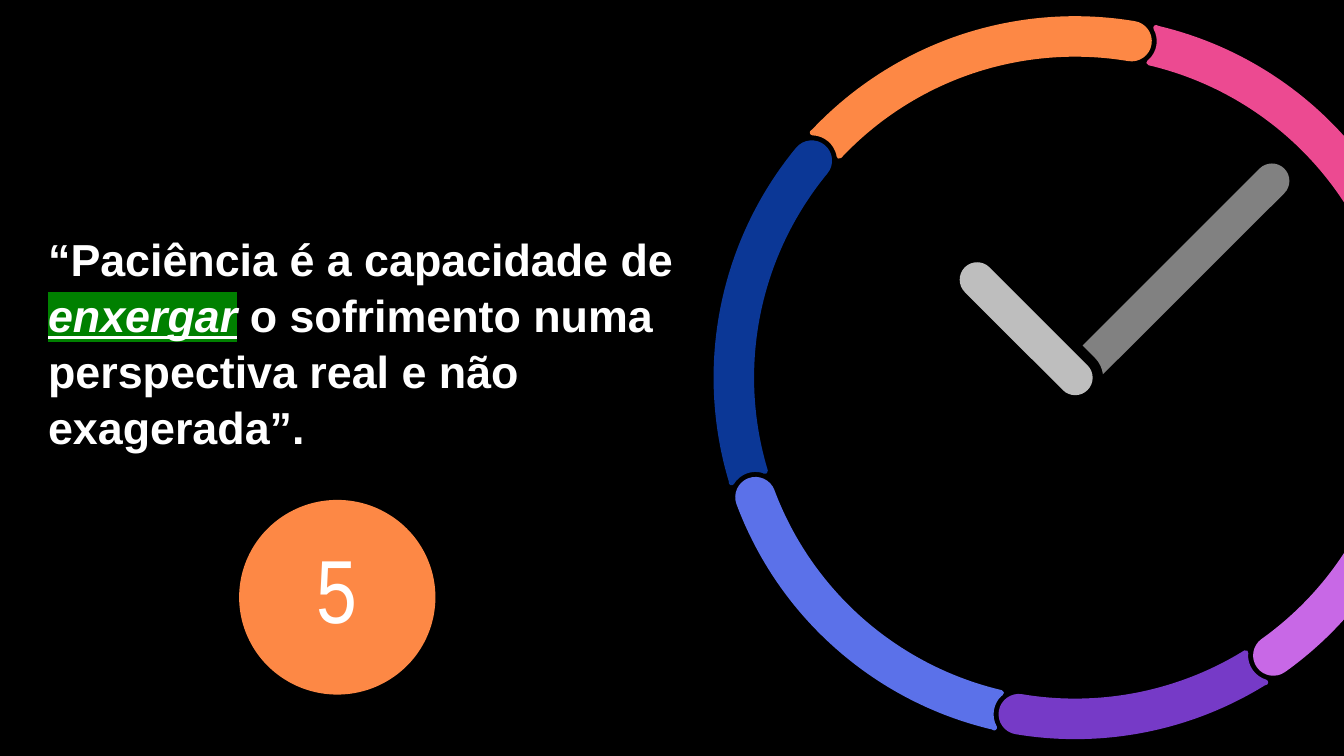
from math import cos, radians, sin, tan

from lxml.etree import SubElement
from pptx import Presentation
from pptx.dml.color import RGBColor as Rgb
from pptx.enum.shapes import MSO_SHAPE as Preset
from pptx.enum.text import MSO_ANCHOR as Anchor, PP_ALIGN as Align
from pptx.oxml.ns import qn
from pptx.util import Cm, Pt

COLORS = {
    "black": "000000", "white": "FFFFFF", "green": "008000",
    "navy": "0B3796", "blue": "5B71E9", "purple": "763AC7",
    "violet": "C868E6", "pink": "EC4A91", "orange": "FD8845",
    "gray": "818181", "silver": "BEBEBE",
}
PIVOT = (20.32, 7.14)
RING_RADIUS = 6.45
CAP_RADIUS = 0.33
NOTCH_RADIUS = 0.53
NOTCH_ANGLE = 38
NOTCH_STEP = 3.7
TILT = 9.5


def polar(center, radius, angle):
    turn = radians(angle)
    return center[0] + radius * sin(turn), center[1] - radius * cos(turn)


def arc(center, radius, start, end):
    middle = (start + end) / 2
    handle = 4 / 3 * tan(radians(end - start) / 8) * radius
    curves = [[polar(center, radius, start)]]
    for a, b in ((start, middle), (middle, end)):
        first, last = polar(center, radius, a), polar(center, radius, b)
        curves.append([polar(first, handle, a + 90),
                       polar(last, handle, b - 90), last])
    return curves


def ring_segment(start, end):
    tail = polar(PIVOT, RING_RADIUS, start)
    head = polar(PIVOT, RING_RADIUS, end)
    return (arc(PIVOT, RING_RADIUS + CAP_RADIUS, start + NOTCH_STEP, end)
            + arc(head, CAP_RADIUS, end, end + 180)
            + arc(PIVOT, RING_RADIUS - CAP_RADIUS, end, start + NOTCH_STEP)
            + arc(tail, NOTCH_RADIUS, start + 90 + NOTCH_ANGLE,
                  start + 90 - NOTCH_ANGLE))


def hand_tip(length, heading):
    return arc(polar(PIVOT, length, heading), CAP_RADIUS,
               heading - 90, heading + 90)


def minute_hand(length, heading):
    base = polar(PIVOT, NOTCH_RADIUS, heading)
    return (hand_tip(length, heading)
            + arc(PIVOT, NOTCH_RADIUS, heading + NOTCH_ANGLE, heading)
            + [[polar(base, CAP_RADIUS, heading - 90)]])


def hour_hand(length, heading):
    return (hand_tip(length, heading)
            + arc(PIVOT, CAP_RADIUS, heading + 90, heading + 270))


def write(paragraph, text, size, font="Arial", color="white", bold=False,
          italic=False, underline=False, highlight=None):
    run = paragraph.add_run()
    run.text = text
    style = run.font
    style.size, style.name = Pt(size), font
    style.bold, style.italic, style.underline = bold, italic, underline
    style.color.rgb = Rgb.from_string(COLORS[color])
    if highlight:
        marker = run._r.rPr.makeelement(qn("a:highlight"), {})
        SubElement(marker, qn("a:srgbClr"), val=COLORS[highlight])
        run._r.rPr.find(qn("a:solidFill")).addnext(marker)


class ClockSlide:
    def __init__(self, slide, background):
        self.slide = slide
        self.shapes = slide.shapes
        self.paint(slide.background.fill, background)

    def paint(self, fill, color):
        fill.solid()
        fill.fore_color.rgb = Rgb.from_string(COLORS[color])

    def finish(self, shape, color):
        shape.shadow.inherit = False
        self.paint(shape.fill, color)
        shape.line.fill.background()

    def outline(self, pieces, color):
        (x, y), *rest = [(Cm(x), Cm(y)) for piece in pieces for x, y in piece]
        builder = self.shapes.build_freeform(x, y)
        builder.add_line_segments(rest, close=True)
        shape = builder.convert_to_shape()
        lines = iter(list(shape._element.iter(qn("a:lnTo"))))
        for piece in pieces[1:]:
            steps = [next(lines) for _ in piece]
            if len(steps) == 3:
                curve = steps[0].makeelement(qn("a:cubicBezTo"), {})
                steps[0].addprevious(curve)
                for step in steps:
                    curve.append(step[0])
                    step.getparent().remove(step)
        self.finish(shape, color)
        return shape

    def segment(self, start, end, color):
        shape = self.outline(ring_segment(start, end), color)
        self.paint(shape.line.fill, color)
        shape.line.width = Pt(3)
        SubElement(shape._element.spPr.find(qn("a:ln")), qn("a:round"))
        dx = shape.left + shape.width / 2 - Cm(PIVOT[0])
        dy = shape.top + shape.height / 2 - Cm(PIVOT[1])
        c, s = cos(radians(TILT)), sin(radians(TILT))
        shape.left += round(dx * c - dy * s - dx)
        shape.top += round(dx * s + dy * c - dy)
        shape.rotation = TILT

    def quote(self, left, top, width, height, parts):
        frame = self.shapes.add_textbox(
            Cm(left), Cm(top), Cm(width), Cm(height)).text_frame
        frame.word_wrap = True
        frame.vertical_anchor = Anchor.MIDDLE
        frame.margin_left = frame.margin_right = Cm(0.25)
        frame.margin_top = frame.margin_bottom = Cm(0.25)
        sentence = frame.paragraphs[0]
        sentence.line_spacing = 1.04
        for text, style in parts:
            write(sentence, text, 24, bold=True, **style)

    def badge(self, left, top, width, height, text, color):
        circle = self.shapes.add_shape(
            Preset.OVAL, Cm(left), Cm(top), Cm(width), Cm(height))
        self.finish(circle, color)
        frame = circle.text_frame
        frame.margin_left = frame.margin_right = 0
        frame.margin_top = frame.margin_bottom = 0
        frame.vertical_anchor = Anchor.MIDDLE
        number = frame.paragraphs[0]
        number.alignment = Align.CENTER
        number.line_spacing = 0.8
        write(number, text, 48, font="Arial Narrow")


def main():
    deck = Presentation()
    deck.slide_width, deck.slide_height = Cm(25.4), Cm(14.29)
    clock = ClockSlide(deck.slides.add_slide(deck.slide_layouts[6]), "black")
    clock.quote(0.66, 3.1, 12.62, 6.71, [
        ("“Paciência é a capacidade de ", {}),
        ("enxergar", {"italic": True, "underline": True,
                      "highlight": "green"}),
        (" o sofrimento numa perspectiva real e não exagerada”.", {}),
    ])
    ring = [(240, 300, "navy"), (180, 240, "blue"), (135, 180, "purple"),
            (90, 135, "violet"), (0, 90, "pink"), (300, 360, "orange")]
    for start, end, color in ring:
        clock.segment(start, end, color)
    clock.outline(minute_hand(5.26, 45), "gray")
    clock.outline(hour_hand(2.62, 315), "silver")
    clock.badge(4.52, 9.45, 3.71, 3.68, "5", "orange")
    deck.save("out.pptx")


if __name__ == "__main__":
    main()
